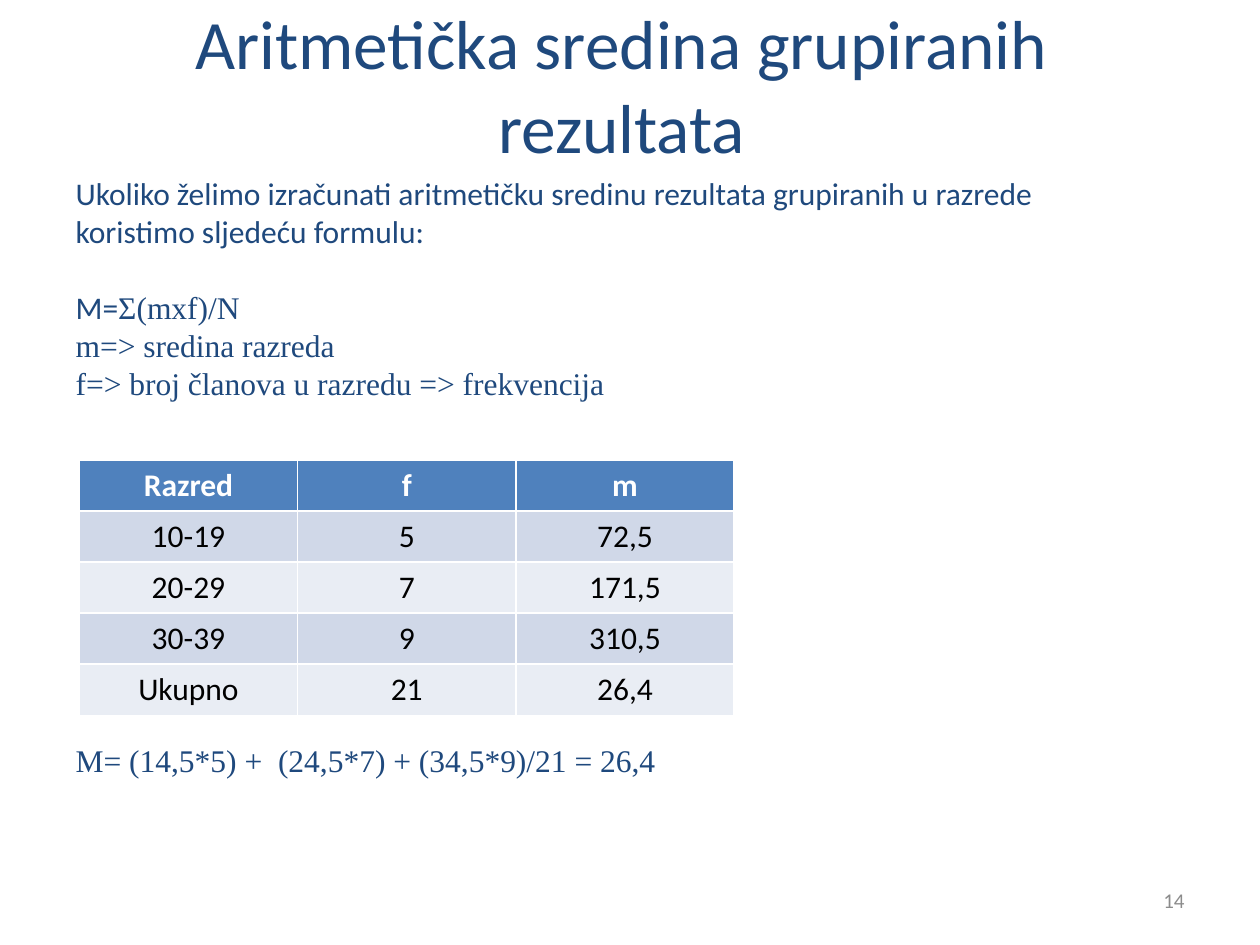
from pptx import Presentation, util as u
from pptx.dml.color import RGBColor
from pptx.enum import text as t
from pptx.oxml.ns import qn

HUES = {"navy": "1F497D", "blue": "4F81BD", "band": "D0D8E8",
        "pale": "E9EDF4", "white": "FFFFFF", "black": "000000",
        "gray": "8C8C8C"}
SANS, SERIF = "Calibri", "Times New Roman"

# Each line: space before in points, then (text, font) runs
LINES = [
    (0, [("Ukoliko želimo izračunati aritmetičku sredinu rezultata grupiranih "
          "u razrede koristimo sljedeću formulu:", SANS)]),
    (22, [("M=", SANS), ("Σ(mxf)/N", SERIF)]),
    (0, [("m=> sredina razreda", SERIF)]),
    (0, [("f=> broj članova u razredu => frekvencija", SERIF)]),
    (194, [("M= (14,5*5) +  (24,5*7) + (34,5*9)/21 = 26,4", SERIF)]),
]
ROWS = [
    ("Razred", "f", "m"),
    ("10-19", "5", "72,5"),
    ("20-29", "7", "171,5"),
    ("30-39", "9", "310,5"),
    ("Ukupno", "21", "26,4"),
]


def hue(name):
    return RGBColor.from_string(HUES[name])


def write(para, words, size=18, font=SANS, color="navy", bold=False,
          align=t.PP_ALIGN.LEFT):
    """Add one formatted run to a paragraph."""
    para.alignment = align
    run = para.add_run()
    run.text = words
    face = run.font
    face.size, face.name, face.bold = u.Pt(size), font, bold
    face.color.rgb = hue(color)


def place(shape, left, top, width, height, anchor):
    """Move a text shape (lengths in cm) and return its frame."""
    shape.left, shape.top = u.Cm(left), u.Cm(top)
    shape.width, shape.height = u.Cm(width), u.Cm(height)
    frame = shape.text_frame
    frame.word_wrap = True
    frame.auto_size = t.MSO_AUTO_SIZE.NONE
    frame.vertical_anchor = anchor
    return frame


def add_list(frame):
    for i, (gap, runs) in enumerate(LINES):
        para = frame.add_paragraph() if i else frame.paragraphs[0]
        para.space_before = u.Pt(gap)
        # No bullet and no hanging indent
        props = para._p.get_or_add_pPr()
        props.set("marL", "0")
        props.set("indent", "0")
        props.append(props.makeelement(qn("a:buNone"), {}))
        for words, font in runs:
            write(para, words, font=font)


def add_grid(slide):
    wide, high = 4.4, 1.02
    grid = slide.shapes.add_table(
        len(ROWS), len(ROWS[0]), u.Cm(1.6), u.Cm(9.27),
        u.Cm(wide * len(ROWS[0])), u.Cm(high * len(ROWS))).table
    for r, row in enumerate(ROWS):
        head = r == 0
        fill = "blue" if head else ("pale", "band")[r % 2]
        for c, words in enumerate(row):
            cell = grid.cell(r, c)
            cell.fill.solid()
            cell.fill.fore_color.rgb = hue(fill)
            write(cell.text_frame.paragraphs[0], words, bold=head,
                  color="white" if head else "black",
                  align=t.PP_ALIGN.CENTER)


def main():
    deck = Presentation()
    deck.slide_width, deck.slide_height = u.Cm(25.4), u.Cm(19.05)
    slide = deck.slides.add_slide(deck.slide_layouts[1])
    mid = t.MSO_ANCHOR.MIDDLE

    # Title
    frame = place(slide.shapes.title, 1.73, 0.74, 21.6, 1.9, mid)
    write(frame.paragraphs[0], "Aritmetička sredina grupiranih rezultata",
          size=39.6, align=t.PP_ALIGN.CENTER)

    # Explanation and formula
    body = slide.placeholders[1]
    add_list(place(body, 1.27, 3.38, 22.22, 14.88, t.MSO_ANCHOR.TOP))

    # Slide number
    box = slide.shapes.add_textbox(0, 0, 0, 0)
    frame = place(box, 18.2, 17.65, 5.93, 1.01, mid)
    write(frame.paragraphs[0], "14", size=12, color="gray",
          align=t.PP_ALIGN.RIGHT)

    # Frequency table
    add_grid(slide)
    deck.save("out.pptx")


if __name__ == "__main__":
    main()
